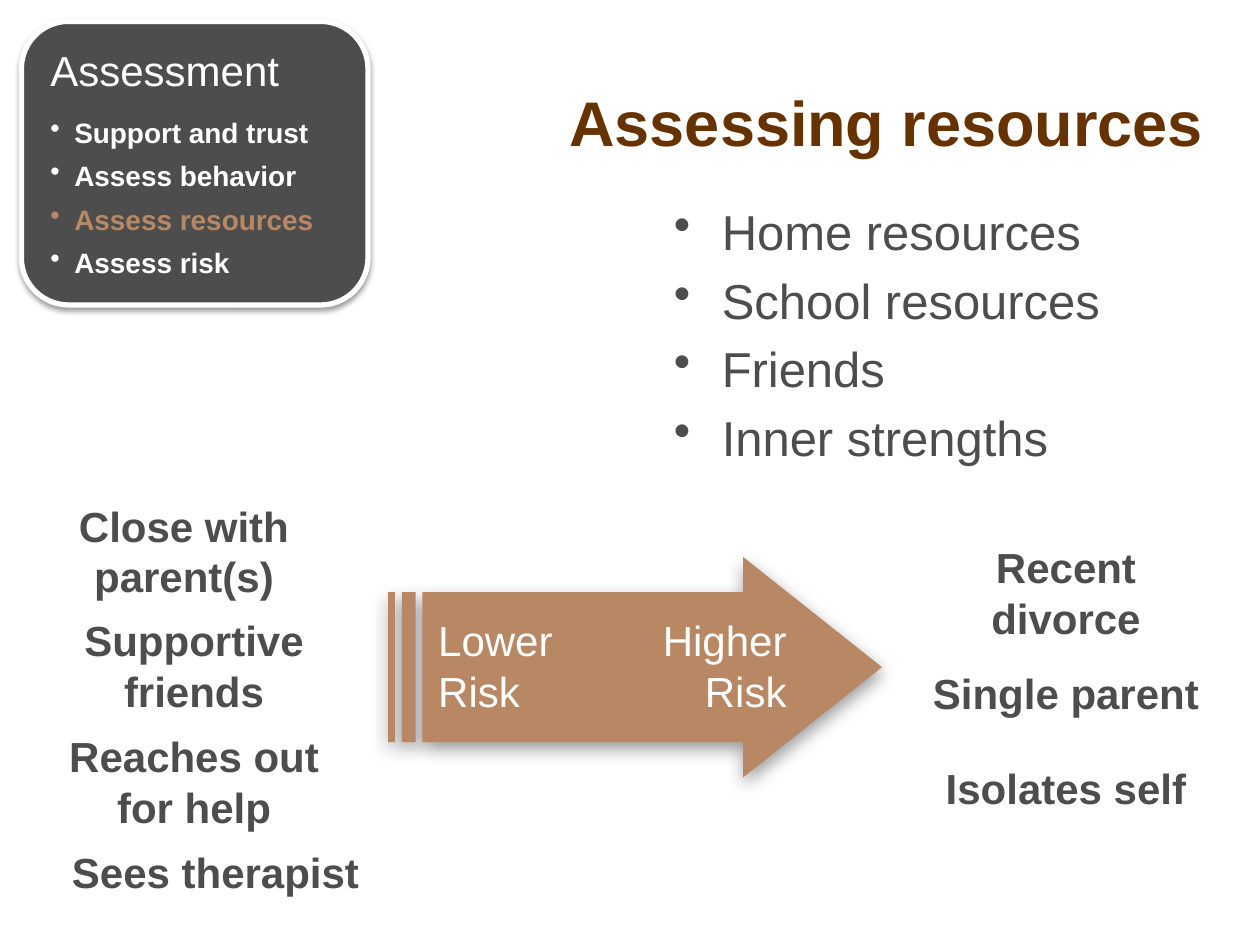
"""Build the slide on assessing resources."""
from dataclasses import dataclass

from lxml.etree import SubElement
from pptx import Presentation
from pptx.dml.color import RGBColor
from pptx.enum.shapes import MSO_SHAPE as Kind
from pptx.enum.text import MSO_ANCHOR as Anchor, MSO_AUTO_SIZE as Fit, PP_ALIGN as Align
from pptx.oxml.ns import qn
from pptx.util import Inches, Pt

WHITE = RGBColor(0xFF, 0xFF, 0xFF)
GRAY = RGBColor(0x4D, 0x4D, 0x4D)
TAN = RGBColor(0xB8, 0x87, 0x64)
BROWN = RGBColor(0x66, 0x33, 0x00)


@dataclass
class Box:
    left: float
    top: float
    width: float
    height: float

    def place(self) -> tuple:
        return tuple(map(Inches, (self.left, self.top, self.width, self.height)))


@dataclass
class Label:
    text: str
    box: Box
    color: RGBColor = GRAY
    bold: bool = True
    align: Align = Align.CENTER


@dataclass
class Shade:
    alpha: int
    blur: float
    dist: float


LABELS = [
    Label("Close with parent(s)", Box(0.25, 3.92, 2.42, 0.91)),
    Label("Supportive friends", Box(0.33, 4.83, 2.42, 0.91)),
    Label("Reaches out for help", Box(0.33, 5.75, 2.42, 0.91)),
    Label("Sees therapist", Box(0.42, 6.67, 2.58, 0.5)),
    Label("Recent divorce", Box(7.17, 4.25, 2.58, 0.91)),
    Label("Single parent", Box(7.17, 5.25, 2.58, 0.5)),
    Label("Isolates self", Box(7.17, 6, 2.58, 0.5)),
]
RISKS = [
    Label("Lower Risk", Box(3.38, 4.83, 1.13, 0.91), WHITE, False, Align.LEFT),
    Label("Higher Risk", Box(5.12, 4.83, 1.22, 0.91), WHITE, False, Align.RIGHT),
]
STEPS = {
    "Support and trust": WHITE,
    "Assess behavior": WHITE,
    "Assess resources": TAN,
    "Assess risk": WHITE,
}
ITEMS = ["Home resources", "School resources", "Friends", "Inner strengths"]


def style(para, size: float, color: RGBColor, bold: bool = False) -> None:
    """Set the font of a paragraph."""
    font = para.font
    font.name, font.size, font.bold = "Arial", Pt(size), bold
    font.color.rgb = color


def bullet(para, indent: float) -> None:
    """Give a paragraph a hanging bullet."""
    props = para._p.get_or_add_pPr()
    props.set("marL", str(Inches(indent)))
    props.set("indent", str(-Inches(indent)))
    SubElement(props, qn("a:buChar"), char="•")


def add_text(shapes, box: Box):
    """Add a wrapping text box and return its frame."""
    frame = shapes.add_textbox(*box.place()).text_frame
    frame.word_wrap = True
    return frame


def add_label(shapes, label: Label) -> None:
    """Add a text box with one short label."""
    frame = add_text(shapes, label.box)
    frame.auto_size = Fit.SHAPE_TO_FIT_TEXT
    para = frame.paragraphs[0]
    para.text, para.alignment = label.text, label.align
    style(para, 24, label.color, label.bold)


def add_panel(shapes, kind: Kind, box: Box, fill: RGBColor, shade: Shade):
    """Add a filled shape with a soft shadow below it."""
    panel = shapes.add_shape(kind, *box.place())
    panel.fill.solid()
    panel.fill.fore_color.rgb = fill
    panel.line.fill.background()
    panel.shadow.inherit = False
    effects = panel._element.spPr.find(qn("a:effectLst"))
    outer = SubElement(effects, qn("a:outerShdw"), blurRad=str(Pt(shade.blur)),
                       dist=str(Pt(shade.dist)), dir="5400000", rotWithShape="0")
    tint = SubElement(outer, qn("a:srgbClr"), val="000000")
    SubElement(tint, qn("a:alpha"), val=str(shade.alpha * 1000))
    return panel


def add_card(shapes) -> None:
    """Add the assessment card with its steps."""
    card = add_panel(shapes, Kind.ROUNDED_RECTANGLE, Box(0.17, 0.17, 2.75, 2.25),
                     GRAY, Shade(38, 3.1, 1.6))
    card.line.color.rgb, card.line.width = WHITE, Pt(3)
    frame = add_text(shapes, Box(0.28, 0.28, 2.53, 2.03))
    frame.margin_left = frame.margin_right = Inches(0.12)
    frame.margin_top = frame.margin_bottom = Inches(0.12)
    head = frame.paragraphs[0]
    head.text, head.line_spacing, head.space_after = "Assessment", 0.9, Pt(8.4)
    style(head, 24, WHITE)
    for step, color in STEPS.items():
        para = frame.add_paragraph()
        para.text, para.level = step, 1
        para.line_spacing, para.space_after = 1.14, Pt(3)
        bullet(para, 0.19)
        style(para, 16, color, True)


def add_arrow(shapes) -> None:
    """Add the risk arrow with its two ends named."""
    arrow = add_panel(shapes, Kind.STRIPED_RIGHT_ARROW, Box(3.08, 4.42, 3.92, 1.75),
                      TAN, Shade(40, 10, 4))
    arrow.adjustments[0], arrow.adjustments[1] = 0.68, 0.63
    for risk in RISKS:
        add_label(shapes, risk)


def add_list(shapes) -> None:
    """Add the list of resources."""
    frame = add_text(shapes, Box(5.25, 1.55, 4.48, 2.29))
    for pos, item in enumerate(ITEMS):
        para = frame.add_paragraph() if pos else frame.paragraphs[0]
        para.text, para.space_before = item, Pt(5.6 if pos else 0)
        bullet(para, 0.38)
        style(para, 28, GRAY)


def add_title(title) -> None:
    """Place and format the title."""
    title.left, title.top, title.width, title.height = Box(3.25, 0.68, 6.4, 0.56).place()
    frame = title.text_frame
    frame.auto_size, frame.vertical_anchor = Fit.NONE, Anchor.MIDDLE
    para = frame.paragraphs[0]
    para.text, para.alignment = "Assessing resources", Align.RIGHT
    style(para, 36, BROWN, True)


def main() -> None:
    """Build and save the deck."""
    deck = Presentation()
    deck.slide_width, deck.slide_height = Inches(10), Inches(7.5)
    slide = deck.slides.add_slide(deck.slide_layouts[5])
    shapes = slide.shapes
    add_title(shapes.title)
    add_card(shapes.add_group_shape().shapes)
    add_arrow(shapes.add_group_shape().shapes)
    add_list(shapes)
    for label in LABELS:
        add_label(shapes, label)
    deck.save("out.pptx")


if __name__ == "__main__":
    main()
